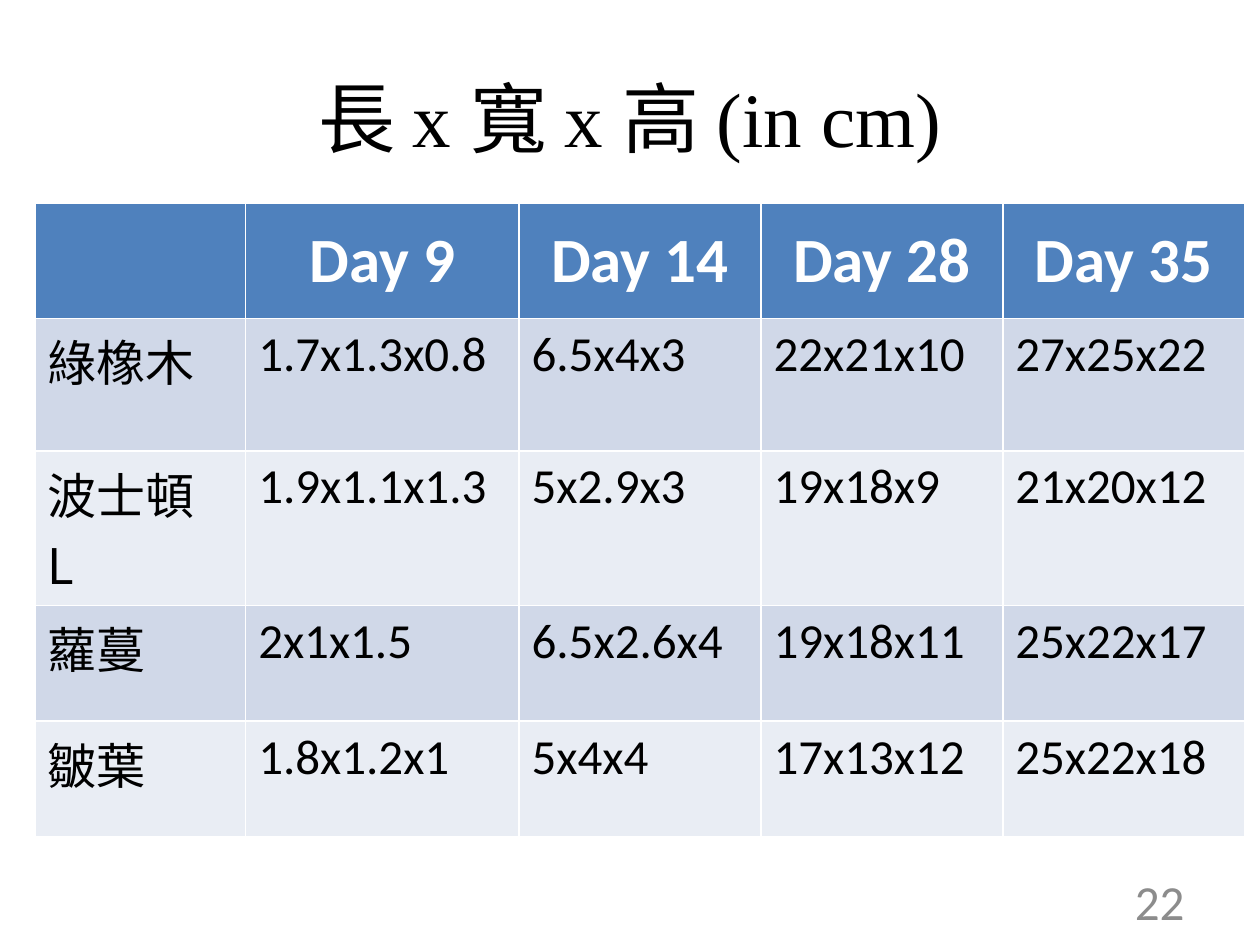
from lxml.etree import SubElement
from pptx import Presentation
from pptx.dml.color import RGBColor
from pptx.enum.text import MSO_ANCHOR, PP_ALIGN
from pptx.oxml.ns import qn
from pptx.util import Inches, Pt

CJK, SERIF, SANS = "Noto Sans CJK SC", "Times New Roman", "Calibri"
COLORS = {"header": "4F81BD", "odd": "D0D8E8", "even": "E9EDF4",
          "white": "FFFFFF", "text": "000000", "number": "8C8C8C"}

TITLE = [("長 ", CJK), ("x ", SERIF), ("寬 ", CJK), ("x ", SERIF),
         ("高 ", CJK), ("(in cm)", SERIF)]
SIZES = [
    ("", "Day 9", "Day 14", "Day 28", "Day 35"),
    ("綠橡木", "1.7x1.3x0.8", "6.5x4x3", "22x21x10", "27x25x22"),
    ("波士頓\vL", "1.9x1.1x1.3", "5x2.9x3", "19x18x9", "21x20x12"),
    ("蘿蔓", "2x1x1.5", "6.5x2.6x4", "19x18x11", "25x22x17"),
    ("皺葉", "1.8x1.2x1", "5x4x4", "17x13x12", "25x22x18"),
]
COLUMN_WIDTHS = [1.67, 2.17, 1.92, 1.92, 1.92]
ROW_HEIGHTS = [0.92, 1.05, 1.22, 0.92, 0.92]

HEADER = {"size": Pt(36), "bold": True}
BODY = {"size": Pt(28), "bold": False}


def rgb(key):
    return RGBColor.from_string(COLORS[key])


def format_run(run, typeface, color, formats):
    """Apply the font for both Latin and East Asian letters."""
    run.font.color.rgb = rgb(color)
    for attribute, value in {"name": typeface, **formats}.items():
        setattr(run.font, attribute, value)
    SubElement(run.font._element, qn("a:ea"), typeface=typeface)


def place(part, left, top, width, height):
    part.left, part.top = Inches(left), Inches(top)
    part.width, part.height = Inches(width), Inches(height)


def add_title(slide):
    title = slide.shapes.title
    place(title, 0.5, 0.3, 9, 1.25)
    title.text_frame.vertical_anchor = MSO_ANCHOR.MIDDLE
    paragraph = title.text_frame.paragraphs[0]
    paragraph.alignment = PP_ALIGN.CENTER
    for words, typeface in TITLE:
        run = paragraph.add_run()
        run.text = words
        format_run(run, typeface, "text", {"size": Pt(44)})


def fill_cell(cell, words, row, column):
    is_header = row == 0
    cell.fill.solid()
    cell.fill.fore_color.rgb = rgb("header" if is_header else "odd" if row % 2 else "even")
    cell.text = words
    paragraph = cell.text_frame.paragraphs[0]
    if is_header:
        cell.vertical_anchor = MSO_ANCHOR.MIDDLE
        paragraph.alignment = PP_ALIGN.CENTER
    for run in paragraph.runs:
        format_run(run, SANS if is_header or column else CJK,
                   "white" if is_header else "text", HEADER if is_header else BODY)


def add_size_table(slide):
    table = slide.shapes.add_table(
        len(SIZES), len(COLUMN_WIDTHS), Inches(0.28), Inches(1.61),
        Inches(sum(COLUMN_WIDTHS)), Inches(sum(ROW_HEIGHTS))).table
    for column, width in zip(table.columns, COLUMN_WIDTHS):
        column.width = Inches(width)
    for row, height in zip(table.rows, ROW_HEIGHTS):
        row.height = Inches(height)
    for r, entries in enumerate(SIZES):
        for c, words in enumerate(entries):
            fill_cell(table.cell(r, c), words, r, c)


def add_page_number(slide):
    number = slide.shapes.add_textbox(0, 0, 0, 0)
    place(number, 7.17, 6.95, 2.33, 0.4)
    number.text_frame.word_wrap = True
    number.text_frame.vertical_anchor = MSO_ANCHOR.MIDDLE
    paragraph = number.text_frame.paragraphs[0]
    paragraph.alignment = PP_ALIGN.RIGHT
    run = paragraph.add_run()
    run.text = "22"
    format_run(run, SANS, "number", BODY)


def main():
    deck = Presentation()
    deck.slide_width, deck.slide_height = Inches(10), Inches(7.5)
    slide = deck.slides.add_slide(deck.slide_layouts[5])
    add_title(slide)
    add_size_table(slide)
    add_page_number(slide)
    deck.save("out.pptx")


if __name__ == "__main__":
    main()
